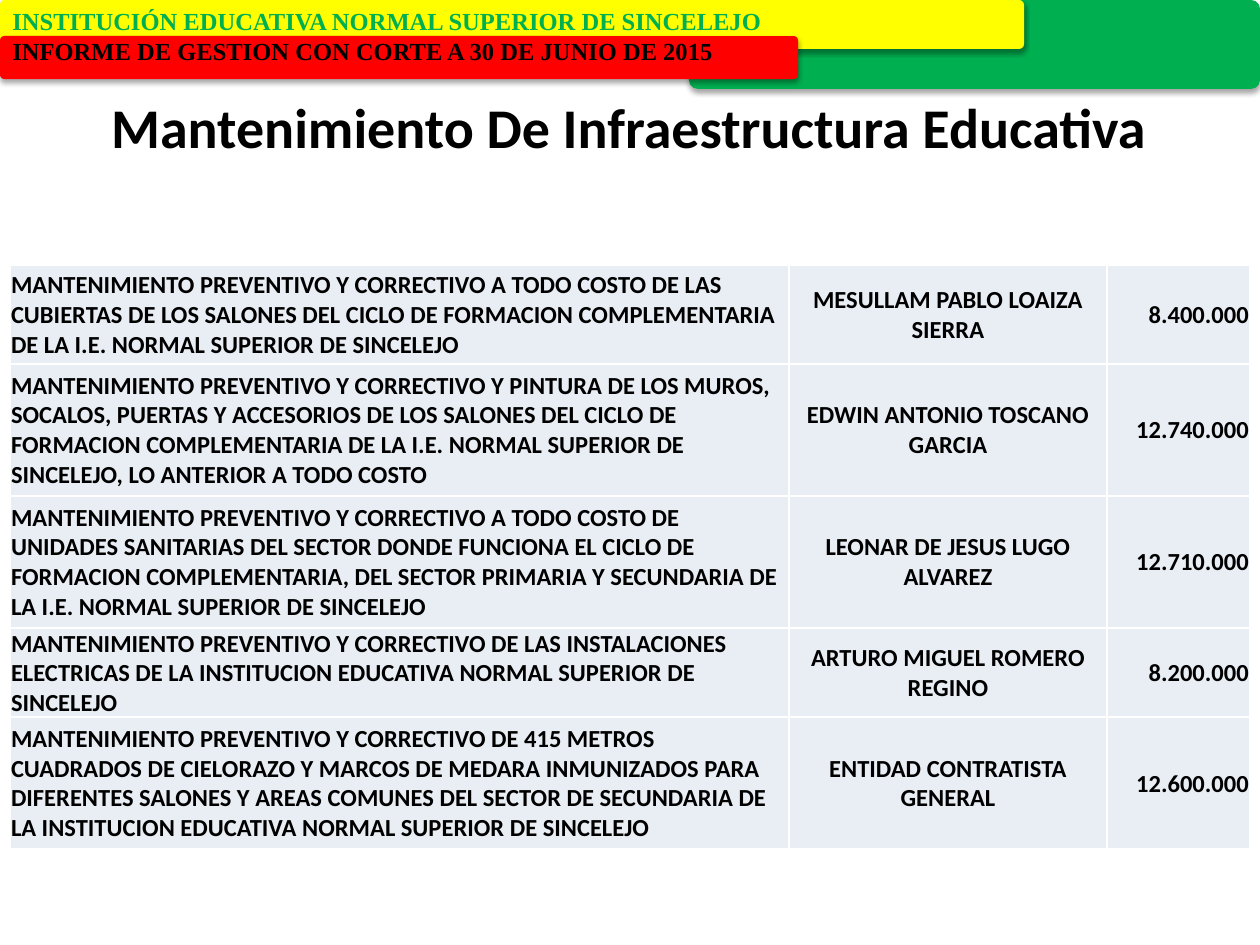
from lxml import etree
from pptx import Presentation, util as u
from pptx.dml.color import RGBColor
from pptx.enum import shapes, text
from pptx.oxml import parse_xml
from pptx.oxml.ns import nsdecls, qn

PX = 914400 / 126
COLORS = {"green": "00B050", "yellow": "FFFF00", "red": "FF0000",
          "black": "000000", "white": "FFFFFF", "cell": "E9EDF4"}
LEFT, CENTER, RIGHT = text.PP_ALIGN.LEFT, text.PP_ALIGN.CENTER, text.PP_ALIGN.RIGHT

CONTRACTS = [
    ("MANTENIMIENTO PREVENTIVO Y CORRECTIVO A TODO COSTO DE LAS CUBIERTAS DE LOS "
     "SALONES DEL CICLO DE FORMACION COMPLEMENTARIA DE LA I.E. NORMAL SUPERIOR DE SINCELEJO",
     "MESULLAM PABLO LOAIZA SIERRA", "8.400.000"),
    ("MANTENIMIENTO PREVENTIVO Y CORRECTIVO Y PINTURA DE LOS MUROS, SOCALOS, PUERTAS Y "
     "ACCESORIOS DE LOS SALONES DEL CICLO DE FORMACION COMPLEMENTARIA DE LA I.E. NORMAL "
     "SUPERIOR DE SINCELEJO, LO ANTERIOR A TODO COSTO",
     "EDWIN ANTONIO TOSCANO GARCIA", "12.740.000"),
    ("MANTENIMIENTO PREVENTIVO Y CORRECTIVO A TODO COSTO DE UNIDADES SANITARIAS DEL SECTOR "
     "DONDE FUNCIONA EL CICLO DE FORMACION COMPLEMENTARIA, DEL SECTOR PRIMARIA Y SECUNDARIA "
     "DE LA I.E. NORMAL SUPERIOR DE SINCELEJO",
     "LEONAR DE JESUS LUGO ALVAREZ", "12.710.000"),
    ("MANTENIMIENTO PREVENTIVO Y CORRECTIVO DE LAS INSTALACIONES ELECTRICAS DE LA "
     "INSTITUCION EDUCATIVA NORMAL SUPERIOR DE SINCELEJO",
     "ARTURO MIGUEL ROMERO REGINO", "8.200.000"),
    ("MANTENIMIENTO PREVENTIVO Y CORRECTIVO DE 415 METROS CUADRADOS DE CIELORAZO Y MARCOS "
     "DE MEDARA INMUNIZADOS PARA DIFERENTES SALONES Y AREAS COMUNES DEL SECTOR DE SECUNDARIA "
     "DE LA INSTITUCION EDUCATIVA NORMAL SUPERIOR DE SINCELEJO",
     "ENTIDAD CONTRATISTA GENERAL", "12.600.000"),
]


def px(n):
    return u.Emu(round(n * PX))


def rgb(name):
    return RGBColor.from_string(COLORS[name])


def add_run(p, words, size, font="Calibri", color="black"):
    r = p.add_run()
    r.text = words
    r.font.size, r.font.name, r.font.bold = u.Pt(size), font, True
    r.font.color.rgb = rgb(color)


def add_bar(s, color, *box):
    sp = s.shapes.add_shape(shapes.MSO_SHAPE.ROUNDED_RECTANGLE, *map(px, box))
    sp.adjustments[0] = 0.1
    sp.fill.solid()
    sp.fill.fore_color.rgb = rgb(color)
    sp.line.fill.background()
    # Soft shadow straight below the bar
    sp.shadow.inherit = False
    effects = sp.element.spPr.find(qn("a:effectLst"))
    effects.append(parse_xml(
        f'<a:outerShdw {nsdecls("a")} blurRad="39370" dist="22860" dir="5400000" '
        'rotWithShape="0"><a:srgbClr val="000000"><a:alpha val="35000"/></a:srgbClr>'
        '</a:outerShdw>'))


def add_header(s, lines, *box):
    tf = s.shapes.add_textbox(*map(px, box)).text_frame
    tf.word_wrap = True
    for i, (words, color) in enumerate(lines):
        p = tf.add_paragraph() if i else tf.paragraphs[0]
        add_run(p, words, 14, "Times New Roman", color)


def set_title(s, words, *box):
    sp = s.shapes.title
    sp.left, sp.top, sp.width, sp.height = map(px, box)
    tf = sp.text_frame
    tf.word_wrap = False
    tf.auto_size = text.MSO_AUTO_SIZE.SHAPE_TO_FIT_TEXT
    p = tf.paragraphs[0]
    p.alignment = CENTER
    add_run(p, words, 32)


def set_borders(cell, color):
    tc_pr = cell._tc.get_or_add_tcPr()
    for i, side in enumerate(("lnL", "lnR", "lnT", "lnB")):
        ln = etree.Element(qn(f"a:{side}"), w="12700")
        fill = etree.SubElement(ln, qn("a:solidFill"))
        etree.SubElement(fill, qn("a:srgbClr"), val=COLORS[color])
        tc_pr.insert(i, ln)


def fill_cell(cell, words, align):
    cell.fill.solid()
    cell.fill.fore_color.rgb = rgb("cell")
    cell.vertical_anchor = text.MSO_ANCHOR.MIDDLE
    cell.margin_left = cell.margin_right = cell.margin_top = px(1)
    cell.margin_bottom = 0
    p = cell.text_frame.paragraphs[0]
    p.alignment = align
    add_run(p, words, 14)
    set_borders(cell, "white")


def add_contracts(s, left, top, widths, heights):
    table = s.shapes.add_table(len(heights), len(widths), px(left), px(top),
                               px(sum(widths)), px(sum(heights))).table
    table.first_row = table.horz_banding = False
    for col, w in zip(table.columns, widths):
        col.width = px(w)
    for row, h, values in zip(table.rows, heights, CONTRACTS):
        row.height = px(h)
        for cell, words, align in zip(row.cells, values, (LEFT, CENTER, RIGHT)):
            fill_cell(cell, words, align)


def main():
    prs = Presentation()
    prs.slide_width, prs.slide_height = px(1260), px(945)
    s = prs.slides.add_slide(prs.slide_layouts[5])

    # Flag-coloured header
    add_bar(s, "green", 689, 0, 571, 89)
    add_bar(s, "yellow", 0, 0, 1024, 49)
    add_bar(s, "red", 0, 36, 798, 43)
    add_header(s, [("INSTITUCIÓN EDUCATIVA NORMAL SUPERIOR DE SINCELEJO", "green"),
                   ("INFORME DE GESTION CON CORTE A 30 DE JUNIO DE 2015", "black")],
               0, 0, 1260, 72)

    # Title and maintenance contracts
    set_title(s, "Mantenimiento De Infraestructura Educativa", 94, 86, 1070, 81)
    add_contracts(s, 10, 265, (779, 318, 143), (99, 132, 132, 89, 132))

    prs.save("out.pptx")


if __name__ == "__main__":
    main()
